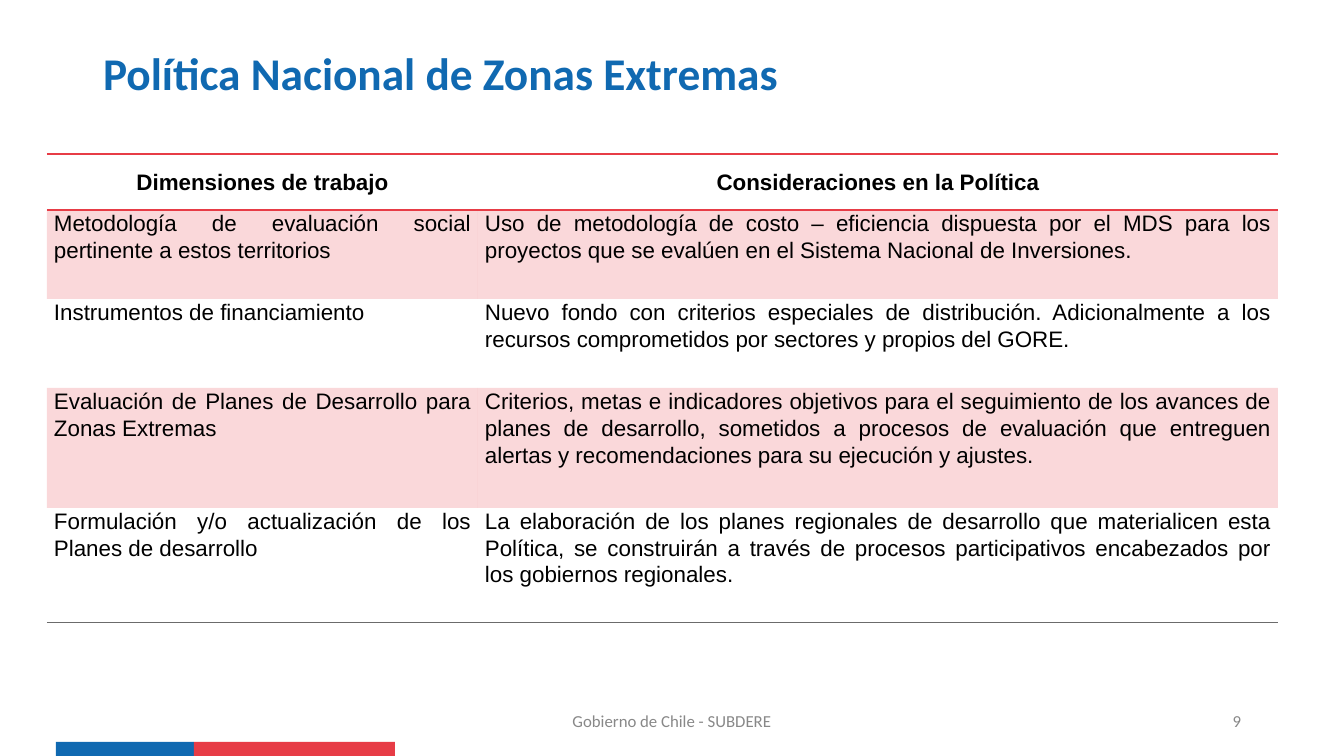
from lxml.etree import SubElement
from pptx import Presentation
from pptx.dml.color import RGBColor
from pptx.enum.shapes import MSO_SHAPE
from pptx.enum.text import MSO_ANCHOR, PP_ALIGN
from pptx.oxml.ns import qn
from pptx.util import Emu, Pt

THEME = {
    "blue": "1069B1", "red": "E73C46", "black": "000000",
    "grey": "888888", "rule": "6B6B6B",
    "heading_font": "Calibri", "table_font": "Arial",
    "title_size": 32.4, "table_size": 16, "footer_size": 12,
}
PX = 12192000 / 1344
NO_STYLE_NO_GRID = "{2D5ABB26-0587-4C30-8999-92F81FD0307C}"


def px(*lengths):
    return [Emu(round(length * PX)) for length in lengths]


def write(frame, text, font, size, color, align, bold=False):
    frame.text = text
    paragraph = frame.paragraphs[0]
    paragraph.alignment = align
    run_font = paragraph.runs[0].font
    run_font.name, run_font.size, run_font.bold = font, Pt(size), bold
    run_font.color.rgb = RGBColor.from_string(THEME[color])
    return paragraph


deck = Presentation()
deck.slide_width, deck.slide_height = px(1344, 756)
slide = deck.slides.add_slide(deck.slide_layouts[5])

# Flag band
for left, width, color in [(56, 138, "blue"), (194, 201, "red")]:
    band = slide.shapes.add_shape(MSO_SHAPE.RECTANGLE, *px(left, 742, width, 14))
    band.shadow.inherit = False
    band.fill.solid()
    band.fill.fore_color.rgb = RGBColor.from_string(THEME[color])
    band.line.fill.background()

# Footer and page number
for left, width, text, align in [
    (445, 454, "Gobierno de Chile - SUBDERE", PP_ALIGN.CENTER),
    (949, 302, "9", PP_ALIGN.RIGHT),
]:
    footer = slide.shapes.add_textbox(*px(left, 701, width, 40)).text_frame
    footer.word_wrap = True
    footer.vertical_anchor = MSO_ANCHOR.MIDDLE
    write(footer, text, THEME["heading_font"], THEME["footer_size"], "grey", align)

# Title
title = slide.shapes.title
title.left, title.top, title.width, title.height = px(93, 46, 1159, 60)
title.text_frame.vertical_anchor = MSO_ANCHOR.MIDDLE
heading = write(title.text_frame, "Política Nacional de Zonas Extremas",
                THEME["heading_font"], THEME["title_size"], "blue", PP_ALIGN.LEFT, True)
heading.line_spacing = 0.9

# Table of work dimensions
DIMENSIONS = [
    ("Dimensiones de trabajo", "Consideraciones en la Política"),
    ("Metodología de evaluación social pertinente a estos territorios",
     "Uso de metodología de costo – eficiencia dispuesta por el MDS para los proyectos "
     "que se evalúen en el Sistema Nacional de Inversiones."),
    ("Instrumentos de financiamiento",
     "Nuevo fondo con criterios especiales de distribución. Adicionalmente a los "
     "recursos comprometidos por sectores y propios del GORE."),
    ("Evaluación de Planes de Desarrollo para Zonas Extremas",
     "Criterios, metas e indicadores objetivos para el seguimiento de los avances de "
     "planes de desarrollo, sometidos a procesos de evaluación que entreguen alertas y "
     "recomendaciones para su ejecución y ajustes."),
    ("Formulación y/o actualización de los Planes de desarrollo",
     "La elaboración de los planes regionales de desarrollo que materialicen esta "
     "Política, se construirán a través de procesos participativos encabezados por los "
     "gobiernos regionales."),
]
COLUMN_WIDTHS = [431, 800]
ROW_HEIGHTS = [56, 89, 89, 120, 115]
ROW_RULES = {0: [("a:lnT", "red"), ("a:lnB", "red")], 4: [("a:lnB", "rule")]}

dimensions = slide.shapes.add_table(
    len(DIMENSIONS), 2, *px(47, 154, sum(COLUMN_WIDTHS), sum(ROW_HEIGHTS))).table
dimensions.horz_banding = False
dimensions._tbl.tblPr.find(qn("a:tableStyleId")).text = NO_STYLE_NO_GRID
for column, width in zip(dimensions.columns, px(*COLUMN_WIDTHS)):
    column.width = width
for row, height in zip(dimensions.rows, px(*ROW_HEIGHTS)):
    row.height = height

for row_index, entries in enumerate(DIMENSIONS):
    is_header = row_index == 0
    for column_index, entry in enumerate(entries):
        cell = dimensions.cell(row_index, column_index)
        cell.margin_left, cell.margin_right, cell.margin_top, cell.margin_bottom = px(7, 7, 0, 0)
        cell.vertical_anchor = MSO_ANCHOR.MIDDLE if is_header else MSO_ANCHOR.TOP
        paragraph = write(cell.text_frame, entry, THEME["table_font"], THEME["table_size"],
                          "black", PP_ALIGN.CENTER if is_header else PP_ALIGN.JUSTIFY, is_header)
        paragraph.line_spacing = 1.07
        paragraph.space_after = Pt(0 if is_header else 8)

        properties = cell._tc.get_or_add_tcPr()
        for side, color in ROW_RULES.get(row_index, []):
            rule = SubElement(properties, qn(side), w=str(Pt(1)))
            SubElement(SubElement(rule, qn("a:solidFill")), qn("a:srgbClr"), val=THEME[color])
        if row_index % 2:
            cell.fill.solid()
            cell.fill.fore_color.rgb = RGBColor.from_string(THEME["red"])
            tint = properties.find(qn("a:solidFill")).find(qn("a:srgbClr"))
            SubElement(tint, qn("a:alpha"), val="20000")
        else:
            cell.fill.background()

deck.save("out.pptx")
